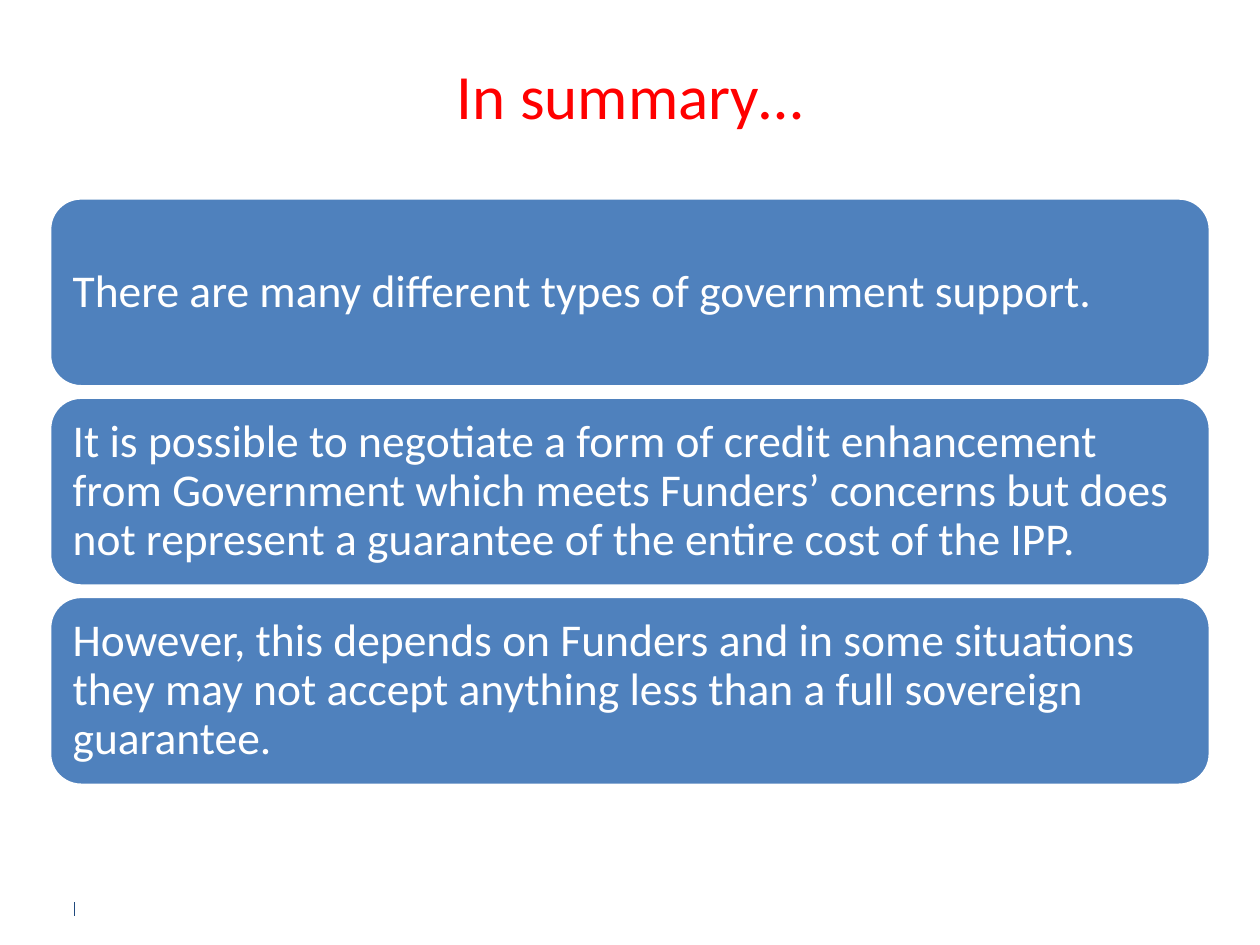
from dataclasses import dataclass

from lxml import etree
from pptx import Presentation
from pptx.dml.color import RGBColor
from pptx.enum.shapes import MSO_CONNECTOR, MSO_SHAPE
from pptx.enum.text import MSO_ANCHOR, PP_ALIGN
from pptx.oxml.ns import qn
from pptx.util import Cm, Pt

ROUND = MSO_SHAPE.ROUNDED_RECTANGLE
STRAIGHT = MSO_CONNECTOR.STRAIGHT
MIDDLE = MSO_ANCHOR.MIDDLE
LEFT, CENTER = PP_ALIGN.LEFT, PP_ALIGN.CENTER


@dataclass(frozen=True)
class Theme:
    font: str = "Calibri"
    white: RGBColor = RGBColor(0xFF, 0xFF, 0xFF)
    red: RGBColor = RGBColor(0xFF, 0x00, 0x00)
    blue: RGBColor = RGBColor(0x4F, 0x81, 0xBD)
    navy: RGBColor = RGBColor(0x1F, 0x49, 0x7D)
    title: Pt = Pt(36)
    body: Pt = Pt(26)


THEME = Theme()
TITLE = "In summary…"
POINTS = [
    "There are many different types of government support.",
    "It is possible to negotiate a form of credit enhancement from Government "
    "which meets Funders’ concerns but does not represent a guarantee of the "
    "entire cost of the IPP.",
    "However, this depends on Funders and in some situations they may not "
    "accept anything less than a full sovereign guarantee.",
]


def write(frame, text, size, color, align, inset):
    frame.word_wrap = True
    frame.vertical_anchor = MIDDLE
    frame.margin_left = frame.margin_right = inset
    frame.margin_top = frame.margin_bottom = inset
    para = frame.paragraphs[0]
    para.alignment = align
    run = para.add_run()
    run.text = text
    run.font.name = THEME.font
    run.font.size = size
    run.font.color.rgb = color
    return para


def add_title(slide, left, top, width, height):
    box = slide.shapes.add_textbox(left, top, width, height)
    write(box.text_frame, TITLE, THEME.title, THEME.red, CENTER, 0)


def add_cards(slide, left, top, width, height, gap):
    """Stack one card per point, sharing the height equally."""
    count = len(POINTS)
    tall = (height - gap * (count - 1)) // count
    for row, text in enumerate(POINTS):
        card = slide.shapes.add_shape(
            ROUND, left, top + row * (tall + gap), width, tall)
        card.shadow.inherit = False
        card.fill.solid()
        card.fill.fore_color.rgb = THEME.blue
        card.line.color.rgb = THEME.white
        card.line.width = Pt(2)
        para = write(card.text_frame, text, THEME.body, THEME.white,
                     LEFT, Cm(0.28))
        para.line_spacing = 0.9


def add_tick(slide, left, top, height):
    tick = slide.shapes.add_connector(STRAIGHT, left, top, left, top + height)
    tick.line.color.rgb = THEME.navy
    tick.line.width = Pt(0.5)
    props = tick.element.find(qn("p:spPr"))
    etree.SubElement(props, qn("a:effectLst"))


def main():
    deck = Presentation()
    deck.slide_width, deck.slide_height = Cm(25.4), Cm(19.05)
    slide = deck.slides.add_slide(deck.slide_layouts[6])
    left, width = Cm(1), Cm(23.4)
    add_tick(slide, Cm(1.5), Cm(18.19), Cm(0.28))
    add_title(slide, left, Cm(1.2), width, Cm(1.4))
    add_cards(slide, left, Cm(3.99), width, Cm(11.84), Cm(0.21))
    deck.save("out.pptx")


if __name__ == "__main__":
    main()
